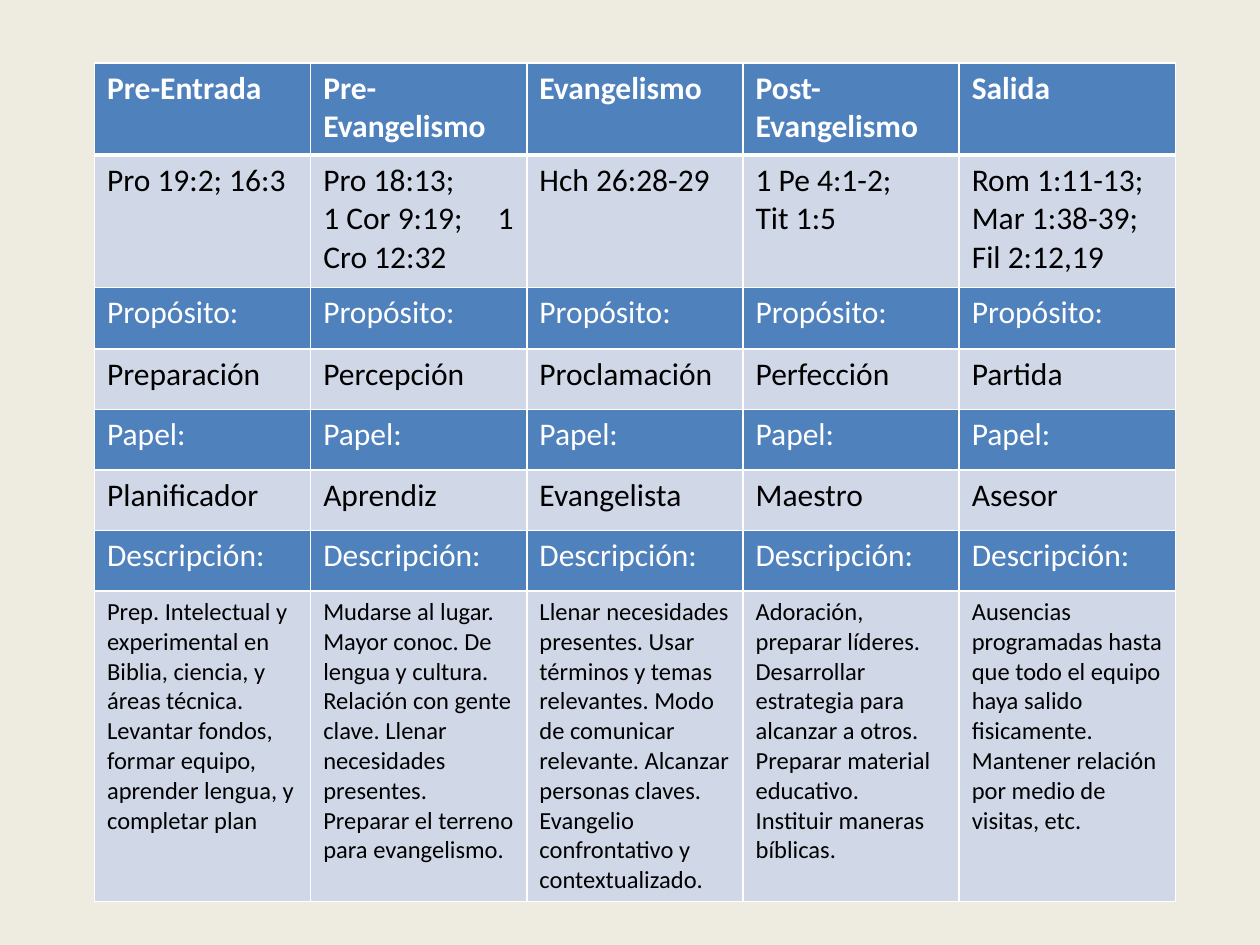
from dataclasses import dataclass

from lxml.etree import SubElement
from pptx import Presentation
from pptx.dml.color import RGBColor as RGB
from pptx.oxml.ns import qn
from pptx.util import Inches, Pt


@dataclass(frozen=True)
class Theme:
    font: str = "Calibri"
    background: str = "EEECE1"
    band: str = "4F81BD"
    pale: str = "D0D8E8"
    light: str = "FFFFFF"
    dark: str = "000000"
    body: int = 18
    small: int = 14
    rule: int = 1
    header_rule: int = 3
    wide_gap: int = 16


# "\v" breaks the line; WIDE stands for one widely spaced blank.
WIDE = "|"
STAGES = ["Pre-Entrada", "Pre-Evangelismo", "Evangelismo", "Post-Evangelismo", "Salida"]
VERSES = [
    "Pro 19:2; 16:3",
    f"Pro 18:13;\v1 Cor 9:19;{WIDE}1\vCro 12:32",
    "Hch 26:28-29",
    "1 Pe 4:1-2;\vTit 1:5",
    "Rom 1:11-13; Mar 1:38-39; Fil 2:12,19",
]
PURPOSES = ["Preparación", "Percepción", "Proclamación", "Perfección", "Partida"]
ROLES = ["Planificador", "Aprendiz", "Evangelista", "Maestro", "Asesor"]
DESCRIPTIONS = [
    "Prep. Intelectual y experimental en Biblia, ciencia, y áreas técnica. "
    "Levantar fondos, formar equipo, aprender lengua, y completar plan",
    "Mudarse al lugar. Mayor conoc. De lengua y cultura. Relación con gente clave. "
    "Llenar necesidades presentes. Preparar el terreno para evangelismo.",
    "Llenar necesidades presentes. Usar términos y temas relevantes. Modo de comunicar "
    "relevante. Alcanzar personas claves. Evangelio confrontativo y contextualizado.",
    "Adoración, preparar líderes. Desarrollar estrategia para alcanzar a otros. "
    "Preparar material educativo.\vInstituir maneras bíblicas.",
    "Ausencias programadas hasta que todo el equipo haya salido fisicamente. "
    "Mantener relación por medio de visitas, etc.",
]


def heading(label):
    return [label] * len(STAGES)


ROWS = [
    STAGES, VERSES,
    heading("Propósito:"), PURPOSES,
    heading("Papel:"), ROLES,
    heading("Descripción:"), DESCRIPTIONS,
]
ROW_HEIGHTS = [0.73, 1.05, 0.49, 0.48, 0.48, 0.48, 0.48, 2.43]
COLUMN_WIDTH = 1.716


class SlideBuilder:
    def __init__(self, prs, theme):
        self.theme = theme
        self.slide = prs.slides.add_slide(prs.slide_layouts[6])
        fill = self.slide.background.fill
        fill.solid()
        fill.fore_color.rgb = RGB.from_string(theme.background)

    def table(self, left, top, rows, heights, column_width):
        """Add a table whose rows alternate between band and pale fills."""
        n_cols = len(rows[0])
        table = self.slide.shapes.add_table(
            len(rows), n_cols, Inches(left), Inches(top),
            Inches(column_width * n_cols), Inches(sum(heights))).table
        table.horz_banding = False
        for col in table.columns:
            col.width = Inches(column_width)
        for i, (texts, height) in enumerate(zip(rows, heights)):
            table.rows[i].height = Inches(height)
            for j, text in enumerate(texts):
                self.cell(table.cell(i, j), text, i, i == len(rows) - 1)

    def cell(self, cell, text, row, small):
        t = self.theme
        banded = row % 2 == 0
        self.borders(cell, row)
        cell.fill.solid()
        cell.fill.fore_color.rgb = RGB.from_string(t.band if banded else t.pale)
        before, wide, after = text.partition(WIDE)
        cell.text_frame.text = before
        p = cell.text_frame.paragraphs[0]
        if wide:
            self.wide_blank(p)
            self.append_lines(p, after)
        for r in p.runs:
            r.font.name = t.font
            r.font.size = Pt(t.small if small else t.body)
            r.font.bold = row == 0
            r.font.color.rgb = RGB.from_string(t.light if banded else t.dark)

    def borders(self, cell, row):
        """Rule all four sides, with a heavier line under the header row."""
        t = self.theme
        heavy = {(0, "lnB"), (1, "lnT")}
        tcPr = cell._tc.get_or_add_tcPr()
        for side in ("lnL", "lnR", "lnT", "lnB"):
            width = t.header_rule if (row, side) in heavy else t.rule
            ln = SubElement(tcPr, qn(f"a:{side}"), w=str(Pt(width)))
            fill = SubElement(ln, qn("a:solidFill"))
            SubElement(fill, qn("a:srgbClr"), val=t.light)

    def wide_blank(self, p):
        """Add one blank, widened by character spacing."""
        r = p.add_run()
        r.text = " "
        r._r.get_or_add_rPr().set("spc", str(self.theme.wide_gap * 100))

    def append_lines(self, p, text):
        for i, line in enumerate(text.split("\v")):
            if i:
                p.add_line_break()
            p.add_run().text = line


def main():
    prs = Presentation()
    prs.slide_width, prs.slide_height = Inches(10), Inches(7.5)
    s = SlideBuilder(prs, Theme())
    s.table(0.75, 0.5, ROWS, ROW_HEIGHTS, COLUMN_WIDTH)
    prs.save("out.pptx")


if __name__ == "__main__":
    main()
